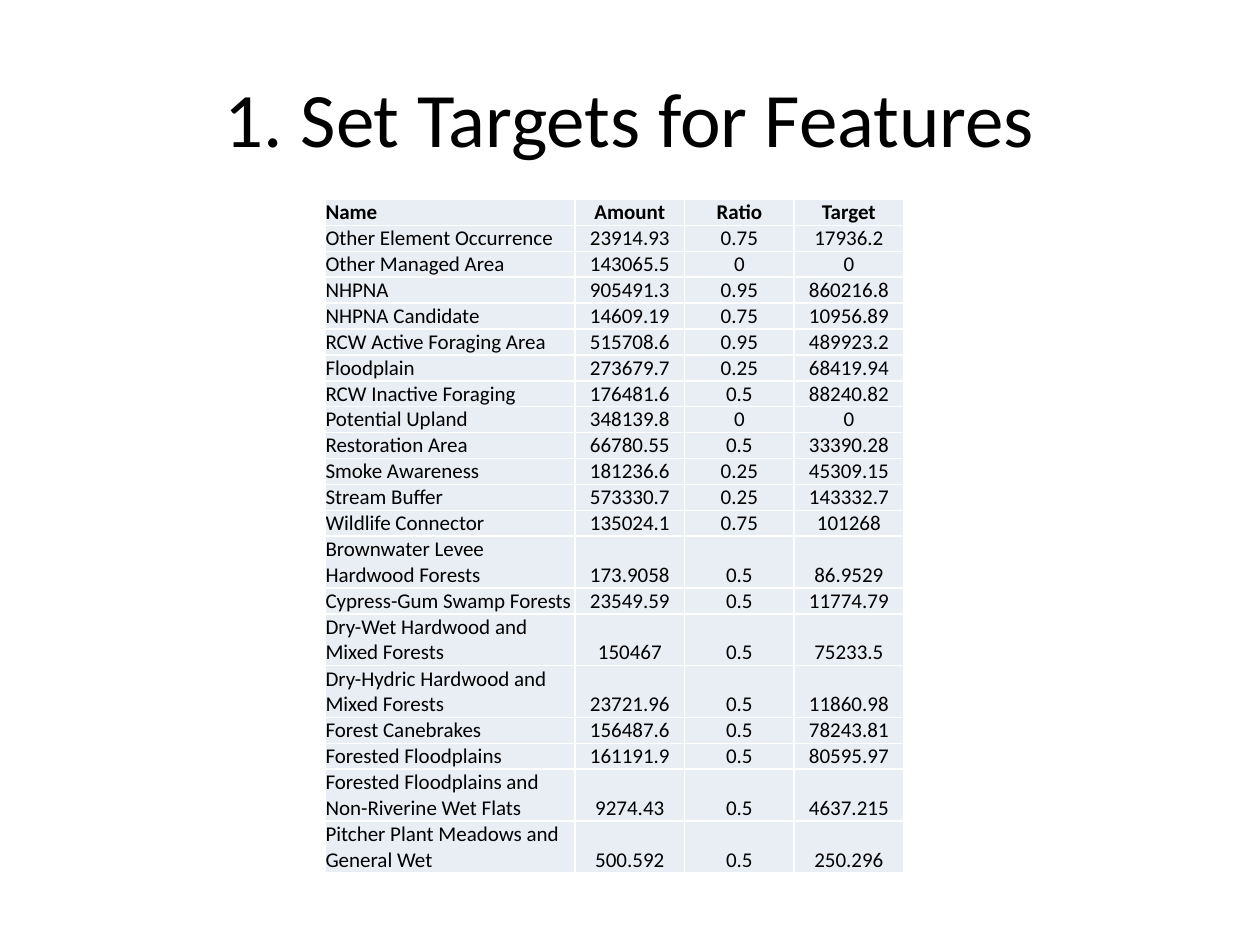
from dataclasses import dataclass

from lxml import etree
from pptx import Presentation
from pptx.dml.color import RGBColor
from pptx.enum import text
from pptx.oxml import ns
from pptx.util import Pt


@dataclass(frozen=True)
class Theme:
    font: str = "Calibri"
    ink: str = "000000"
    cell: str = "E9EDF4"
    border: str = "FFFFFF"
    title_size: int = 44
    table_size: int = 12
    border_width: int = 1


THEME = Theme()
COLUMN_WIDTHS = (142.6, 62.6, 62.6, 62.6)
LINE_HEIGHT = 14.8
WRAP_LENGTH = 26

HEADER = ("Name", "Amount", "Ratio", "Target")
FEATURES = [
    ("Other Element Occurrence", "23914.93", "0.75", "17936.2"),
    ("Other Managed Area", "143065.5", "0", "0"),
    ("NHPNA", "905491.3", "0.95", "860216.8"),
    ("NHPNA Candidate", "14609.19", "0.75", "10956.89"),
    ("RCW Active Foraging Area", "515708.6", "0.95", "489923.2"),
    ("Floodplain", "273679.7", "0.25", "68419.94"),
    ("RCW Inactive Foraging", "176481.6", "0.5", "88240.82"),
    ("Potential Upland", "348139.8", "0", "0"),
    ("Restoration Area", "66780.55", "0.5", "33390.28"),
    ("Smoke Awareness", "181236.6", "0.25", "45309.15"),
    ("Stream Buffer", "573330.7", "0.25", "143332.7"),
    ("Wildlife Connector", "135024.1", "0.75", "101268"),
    ("Brownwater Levee Hardwood Forests", "173.9058", "0.5", "86.9529"),
    ("Cypress-Gum Swamp Forests", "23549.59", "0.5", "11774.79"),
    ("Dry-Wet Hardwood and Mixed Forests", "150467", "0.5", "75233.5"),
    ("Dry-Hydric Hardwood and Mixed Forests", "23721.96", "0.5", "11860.98"),
    ("Forest Canebrakes", "156487.6", "0.5", "78243.81"),
    ("Forested Floodplains", "161191.9", "0.5", "80595.97"),
    ("Forested Floodplains and Non-Riverine Wet Flats", "9274.43", "0.5", "4637.215"),
    ("Pitcher Plant Meadows and General Wet", "500.592", "0.5", "250.296"),
]


def write_text(tf, words, size, bold=False, align=text.PP_ALIGN.CENTER):
    tf.word_wrap = True
    p = tf.paragraphs[0]
    p.alignment = align
    r = p.add_run()
    r.text = words
    r.font.name = THEME.font
    r.font.size = Pt(size)
    r.font.bold = bold
    r.font.color.rgb = RGBColor.from_string(THEME.ink)


def add_borders(cell):
    tc_pr = cell._tc.get_or_add_tcPr()
    for side in ("lnL", "lnR", "lnT", "lnB"):
        ln = etree.SubElement(tc_pr, ns.qn(f"a:{side}"), w=str(Pt(THEME.border_width)))
        fill = etree.SubElement(ln, ns.qn("a:solidFill"))
        etree.SubElement(fill, ns.qn("a:srgbClr"), val=THEME.border)


def add_title(s, x, y, w, h):
    tf = s.shapes.add_textbox(Pt(x), Pt(y), Pt(w), Pt(h)).text_frame
    tf.vertical_anchor = text.MSO_ANCHOR.MIDDLE
    write_text(tf, "1. Set Targets for Features", THEME.title_size)


def add_targets_table(s, x, y, w):
    rows = [HEADER, *FEATURES]
    heights = [LINE_HEIGHT * (2 if len(row[0]) > WRAP_LENGTH else 1) for row in rows]
    table = s.shapes.add_table(
        len(rows), len(HEADER), Pt(x), Pt(y), Pt(w), Pt(sum(heights))
    ).table
    table.first_row = table.horz_banding = False
    for column, width in zip(table.columns, COLUMN_WIDTHS):
        column.width = Pt(w * width / sum(COLUMN_WIDTHS))
    for i, (row, height) in enumerate(zip(rows, heights)):
        table.rows[i].height = Pt(height)
        for j, words in enumerate(row):
            cell = table.cell(i, j)
            cell.margin_left = cell.margin_right = 0
            cell.margin_top = cell.margin_bottom = 0
            cell.vertical_anchor = text.MSO_ANCHOR.BOTTOM
            add_borders(cell)
            cell.fill.solid()
            cell.fill.fore_color.rgb = RGBColor.from_string(THEME.cell)
            align = text.PP_ALIGN.CENTER if j else text.PP_ALIGN.LEFT
            write_text(cell.text_frame, words, THEME.table_size, bold=i == 0, align=align)


def main():
    prs = Presentation()
    prs.slide_width, prs.slide_height = Pt(720), Pt(540)
    s = prs.slides.add_slide(prs.slide_layouts[6])
    add_title(s, 36, 21.6, 648, 90)
    add_targets_table(s, 186, 114, sum(COLUMN_WIDTHS))
    prs.save("out.pptx")


if __name__ == "__main__":
    main()
